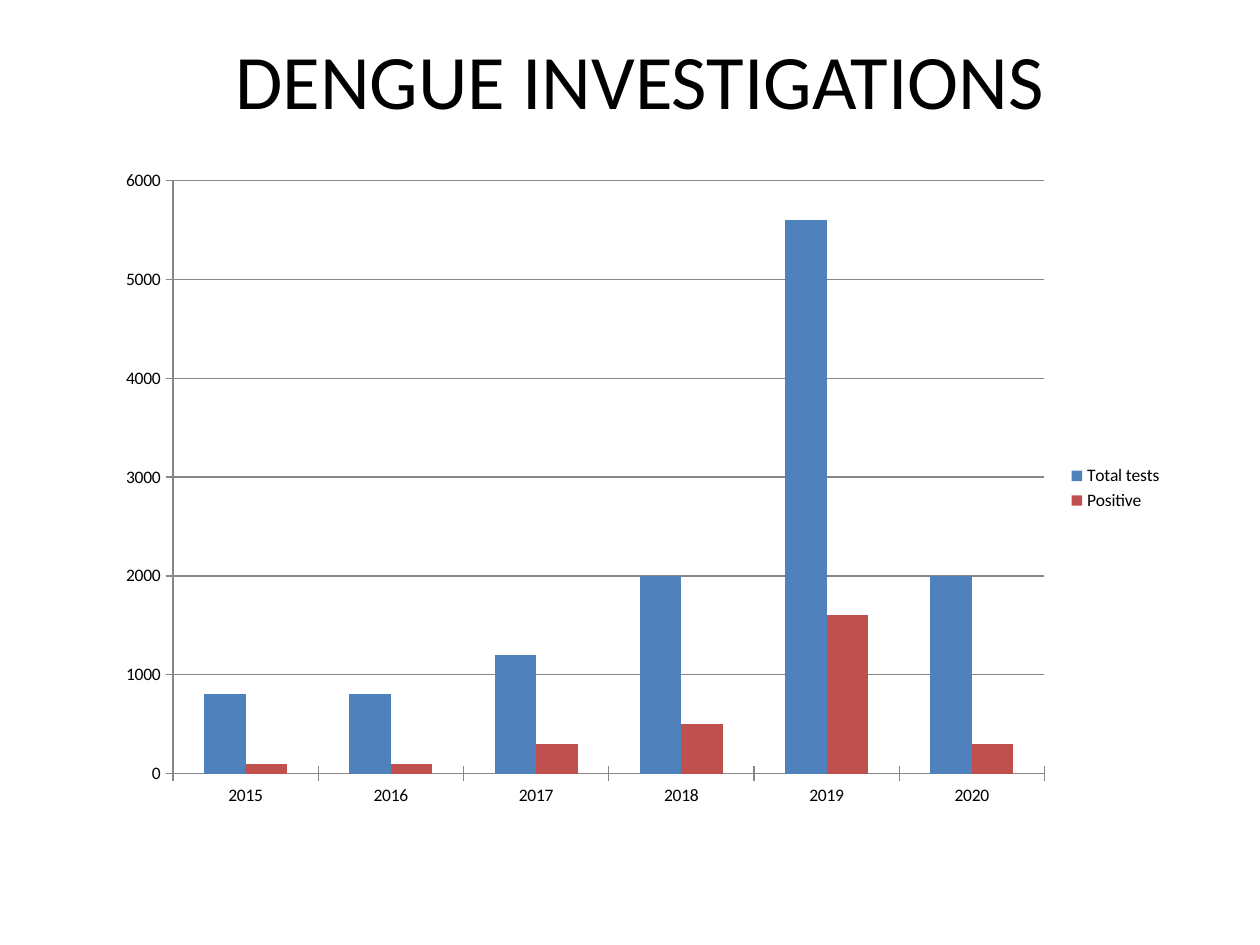
from pptx import Presentation
from pptx.chart.data import CategoryChartData
from pptx.dml.color import RGBColor
from pptx.enum.chart import XL_CHART_TYPE, XL_LEGEND_POSITION, XL_TICK_MARK
from pptx.enum.text import MSO_ANCHOR, PP_ALIGN
from pptx.util import Inches, Pt

BLACK = RGBColor(0x00, 0x00, 0x00)
GRAY = RGBColor(0x86, 0x86, 0x86)
BLUE = RGBColor(0x4F, 0x81, 0xBD)
RED = RGBColor(0xC0, 0x50, 0x4D)
FONT = "Calibri"

deck = Presentation()
deck.slide_width = Inches(10)
deck.slide_height = Inches(7.5)
slide = deck.slides.add_slide(deck.slide_layouts[6])

data = CategoryChartData()
data.categories = [str(year) for year in range(2015, 2021)]
data.add_series("Total tests", (800, 800, 1200, 2000, 5600, 2000))
data.add_series("Positive", (100, 100, 300, 500, 1600, 300))

chart = slide.shapes.add_chart(
    XL_CHART_TYPE.COLUMN_CLUSTERED,
    Inches(0.83), Inches(1.25), Inches(8.5), Inches(5.25), data).chart
chart.has_title = False
chart.font.name = FONT
chart.font.size = Pt(10)
chart.font.color.rgb = BLACK
chart.has_legend = True
chart.legend.position = XL_LEGEND_POSITION.RIGHT
chart.legend.include_in_layout = False

plot = chart.plots[0]
plot.gap_width = 150
plot.overlap = 0
plot.vary_by_categories = False
for series, color in zip(plot.series, (BLUE, RED)):
    series.format.fill.solid()
    series.format.fill.fore_color.rgb = color

for axis in (chart.category_axis, chart.value_axis):
    axis.major_tick_mark = XL_TICK_MARK.CROSS
    axis.minor_tick_mark = XL_TICK_MARK.NONE
    axis.format.line.color.rgb = GRAY
    axis.format.line.width = Pt(0.75)

scale = chart.value_axis
scale.minimum_scale = 0
scale.maximum_scale = 6000
scale.major_unit = 1000
scale.has_major_gridlines = True
scale.major_gridlines.format.line.color.rgb = GRAY
scale.major_gridlines.format.line.width = Pt(0.75)

title = slide.shapes.add_textbox(Inches(0.58), Inches(0), Inches(9), Inches(1.25))
frame = title.text_frame
frame.word_wrap = True
frame.vertical_anchor = MSO_ANCHOR.MIDDLE
frame.text = "DENGUE INVESTIGATIONS"
line = frame.paragraphs[0]
line.alignment = PP_ALIGN.CENTER
font = line.runs[0].font
font.name = FONT
font.size = Pt(44)
font.color.rgb = BLACK

deck.save("out.pptx")
